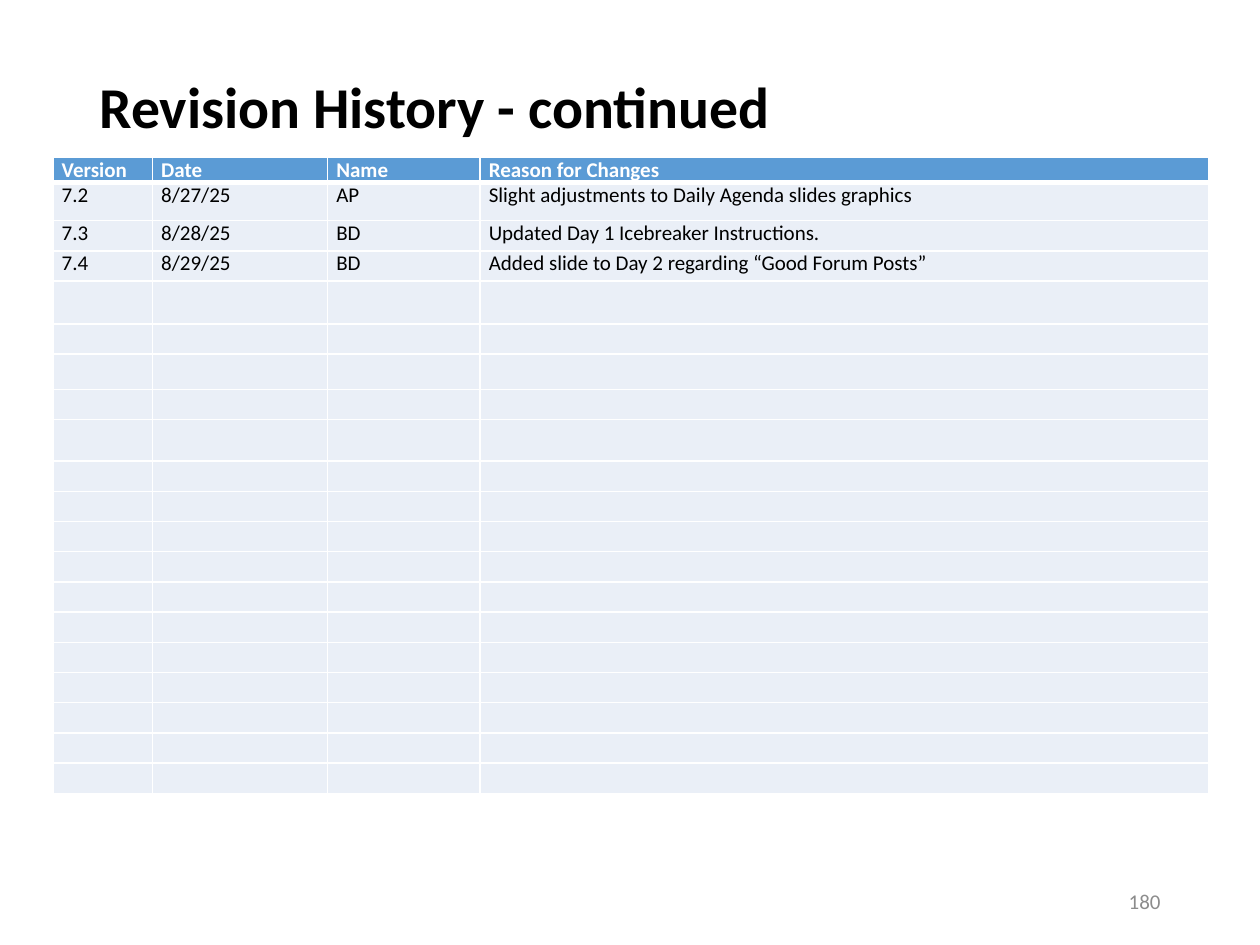
from dataclasses import dataclass

from lxml import etree
from pptx import Presentation
from pptx.dml.color import RGBColor
from pptx.enum.text import MSO_ANCHOR, PP_ALIGN
from pptx.oxml.ns import qn
from pptx.util import Inches, Pt

MIDDLE = MSO_ANCHOR.MIDDLE
LEFT, RIGHT = PP_ALIGN.LEFT, PP_ALIGN.RIGHT
FONT = "Calibri"
WHITE, BLACK, GREY = "FFFFFF", "000000", "8C8C8C"
HEADER_FILL, BODY_FILL = "5B9BD5", "EAEFF7"

COLUMNS = [0.79, 1.39, 1.21, 5.78]
ROW_COUNT = 20
ROW_HEIGHT = 0.24
SPECIAL_HEIGHTS = {0: 0.2, 1: 0.3, 4: 0.34, 6: 0.28, 8: 0.33}
REVISIONS = [
    ("Version", "Date", "Name", "Reason for Changes"),
    ("7.2", "8/27/25", "AP", "Slight adjustments to Daily Agenda slides graphics"),
    ("7.3", "8/28/25", "BD", "Updated Day 1 Icebreaker Instructions."),
    ("7.4", "8/29/25", "BD", "Added slide to Day 2 regarding “Good Forum Posts”"),
]


@dataclass
class Label:
    text: str
    left: float
    top: float
    width: float
    height: float
    size: float
    color: str
    bold: bool = False
    align: PP_ALIGN = LEFT
    bottom_inset: float = 0.05
    line_spacing: float = 1.0


def rgb(value: str) -> RGBColor:
    return RGBColor.from_string(value)


def write(p, text: str, size: float, color: str, bold: bool) -> None:
    r = p.add_run()
    r.text = text
    for name, value in {"name": FONT, "size": Pt(size), "bold": bold}.items():
        setattr(r.font, name, value)
    r.font.color.rgb = rgb(color)


def add_label(s, label: Label) -> None:
    box = s.shapes.add_textbox(Inches(label.left), Inches(label.top),
                               Inches(label.width), Inches(label.height))
    tf = box.text_frame
    frame_format = {"word_wrap": True, "vertical_anchor": MIDDLE,
                    "margin_bottom": Inches(label.bottom_inset)}
    for name, value in frame_format.items():
        setattr(tf, name, value)
    p = tf.paragraphs[0]
    p.alignment = label.align
    p.line_spacing = label.line_spacing
    write(p, label.text, label.size, label.color, label.bold)


def set_border(cell, side: str, width: float) -> None:
    tc_pr = cell._tc.get_or_add_tcPr()
    ln = etree.SubElement(tc_pr, qn(f"a:ln{side}"), w=str(Pt(width)))
    fill = etree.SubElement(ln, qn("a:solidFill"))
    etree.SubElement(fill, qn("a:srgbClr"), val=WHITE)


def format_cell(cell, row: int, text: str) -> None:
    header = row == 0
    margins = {"margin_left": 0.07, "margin_right": 0.07,
               "margin_top": 0, "margin_bottom": 0}
    for name, value in margins.items():
        setattr(cell, name, Inches(value))
    borders = {"L": 1, "R": 1, "T": 3 if row == 1 else 1, "B": 3 if header else 1}
    for side, width in borders.items():
        set_border(cell, side, width)
    cell.fill.solid()
    cell.fill.fore_color.rgb = rgb(HEADER_FILL if header else BODY_FILL)
    p = cell.text_frame.paragraphs[0]
    if text:
        write(p, text, 12, WHITE if header else BLACK, header)
    else:
        etree.SubElement(p._p, qn("a:endParaRPr"), sz="1200")


def add_revision_table(s) -> None:
    heights = [SPECIAL_HEIGHTS.get(i, ROW_HEIGHT) for i in range(ROW_COUNT)]
    table = s.shapes.add_table(ROW_COUNT, len(COLUMNS), Inches(0.42), Inches(1.25),
                               Inches(sum(COLUMNS)), Inches(sum(heights))).table
    for column, width in zip(table.columns, COLUMNS):
        column.width = Inches(width)
    for i, height in enumerate(heights):
        table.rows[i].height = Inches(height)
        values = REVISIONS[i] if i < len(REVISIONS) else [""] * len(COLUMNS)
        for j, text in enumerate(values):
            format_cell(table.cell(i, j), i, text)


def main() -> None:
    prs = Presentation()
    prs.slide_width, prs.slide_height = Inches(10), Inches(7.5)
    s = prs.slides.add_slide(prs.slide_layouts[6])
    add_label(s, Label("Revision History - continued", 0.69, 0.4, 8.62, 1.45, 33, BLACK,
                       bold=True, bottom_inset=0.55, line_spacing=0.9))
    add_revision_table(s)
    add_label(s, Label("180", 7.06, 6.95, 2.25, 0.4, 12, GREY, align=RIGHT))
    prs.save("out.pptx")


if __name__ == "__main__":
    main()
